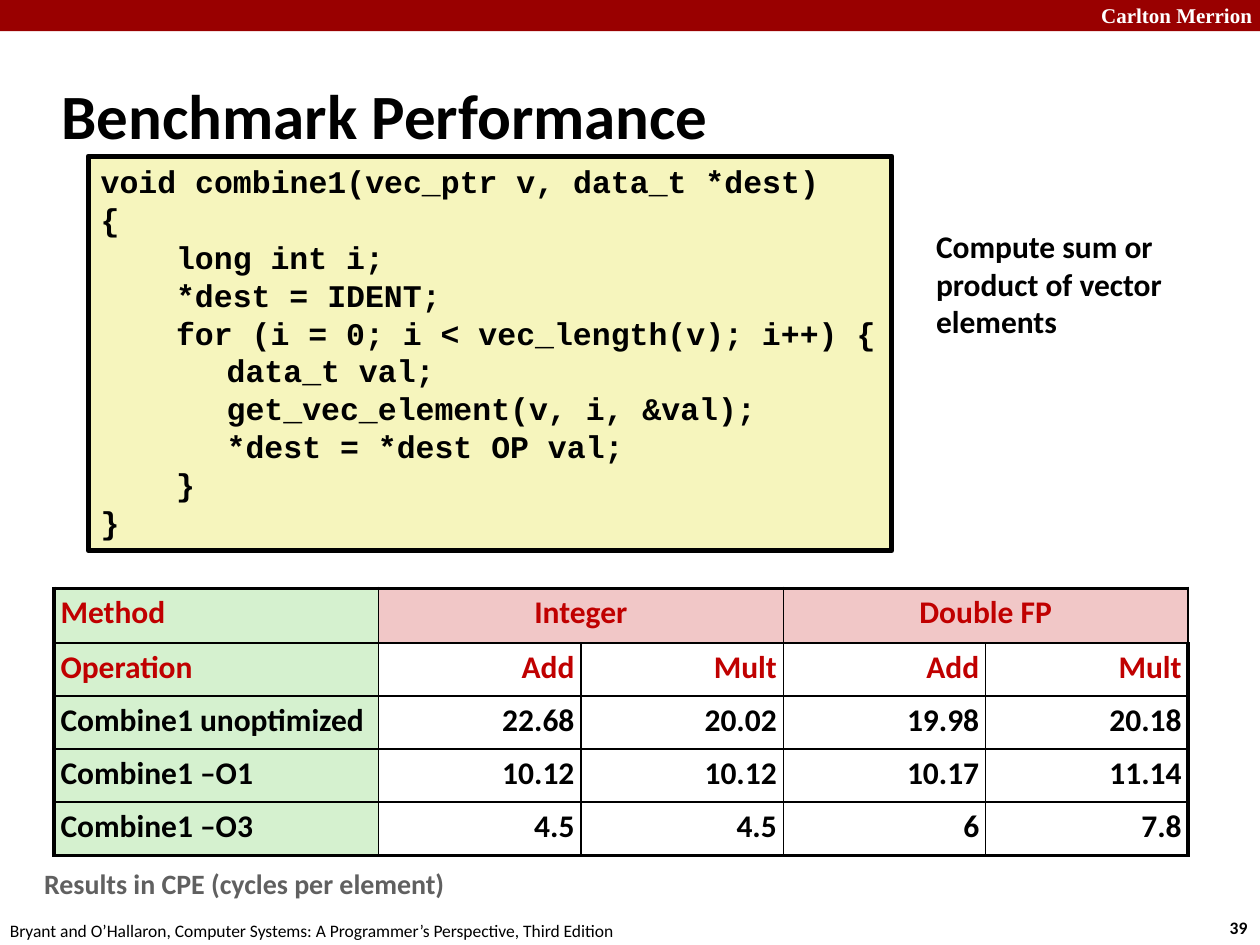
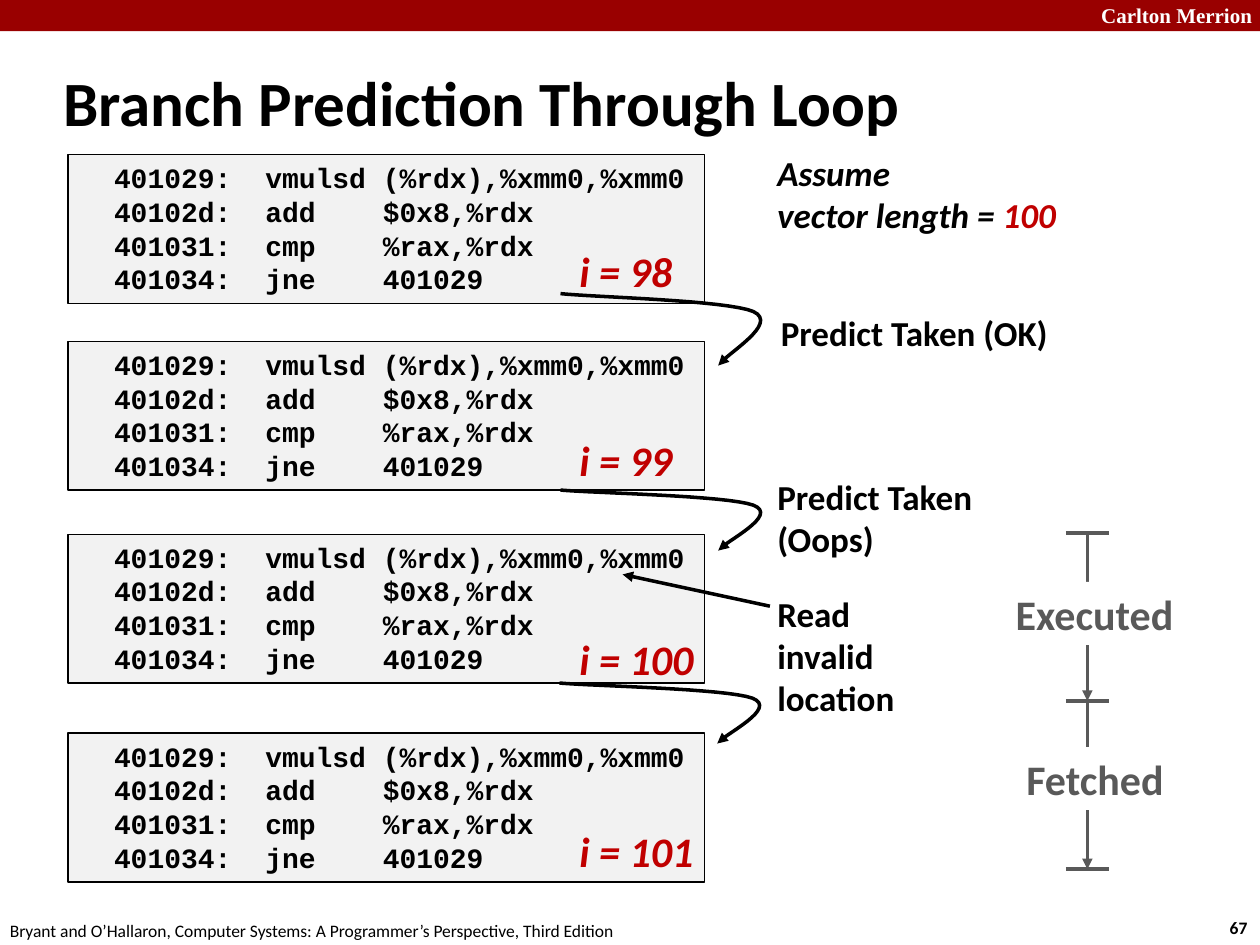
from dataclasses import dataclass, replace

import pptx
import pptx.dml.color
import pptx.enum.shapes
import pptx.enum.text
import pptx.oxml
import pptx.oxml.ns
import pptx.util
from lxml import etree

Cm = pptx.util.Cm
Pt = pptx.util.Pt
RGBColor = pptx.dml.color.RGBColor
Align = pptx.enum.text.PP_ALIGN
Anchor = pptx.enum.text.MSO_ANCHOR
qn = pptx.oxml.ns.qn

BLACK = RGBColor(0x00, 0x00, 0x00)
WHITE = RGBColor(0xFF, 0xFF, 0xFF)
BAND_RED = RGBColor(0x99, 0x00, 0x00)
RED = RGBColor(0xC0, 0x00, 0x00)
NOTE_GRAY = RGBColor(0x60, 0x60, 0x60)
SPAN_GRAY = RGBColor(0x59, 0x59, 0x59)
CODE_YELLOW = RGBColor(0xF6, 0xF5, 0xBD)
CODE_GRAY = RGBColor(0xF2, 0xF2, 0xF2)
HEAD_GREEN = RGBColor(0xD5, 0xF1, 0xCF)
HEAD_PINK = RGBColor(0xF1, 0xC7, 0xC7)


@dataclass(frozen=True)
class Style:
    size: float
    color: RGBColor = BLACK
    font: str = "Calibri"
    bold: bool = True
    italic: bool = False


TITLE = Style(36)
BRAND = Style(12, WHITE, "Times New Roman")
FOOTER = Style(10, bold=False)
PAGE_NUMBER = Style(10)
BODY = Style(18)
REMARK = Style(20)
ITERATION = Style(24, RED, italic=True)
SPAN_LABEL = Style(24, SPAN_GRAY)
C_CODE = Style(18, font="Courier New")
ASSEMBLY = Style(16, font="Courier New")

# Left indent in cm, then the line
COMBINE1 = [
    (0, "void combine1(vec_ptr v, data_t *dest)"),
    (0, "{"),
    (1.52, "long int i;"),
    (1.52, "*dest = IDENT;"),
    (1.52, "for (i = 0; i < vec_length(v); i++) {"),
    (2.54, "data_t val;"),
    (2.54, "get_vec_element(v, i, &val);"),
    (2.54, "*dest = *dest OP val;"),
    (1.52, "}"),
    (0, "}"),
]
LOOP = [
    "401029:\tvmulsd\t(%rdx),%xmm0,%xmm0",
    "40102d:\tadd\t$0x8,%rdx",
    "401031:\tcmp\t%rax,%rdx",
    "401034:\tjne\t401029",
]
LOOP_TABS = (3.05, 5.42)
CPE_ROWS = [
    ["Method", "Integer", "", "Double FP", ""],
    ["Operation", "Add", "Mult", "Add", "Mult"],
    ["Combine1 unoptimized", "22.68", "20.02", "19.98", "20.18"],
    ["Combine1 –O1", "10.12", "10.12", "10.17", "11.14"],
    ["Combine1 –O3", "4.5", "4.5", "6", "7.8"],
]
# Two Bezier segments of a jump: x in cm, y as a share of the drop
JUMP = [(0, 0), (0.66, 0.05), (3.35, 0.09), (3.89, 0.25),
        (4.42, 0.42), (3.33, 0.84), (3.18, 1)]


def add_run(paragraph, text, style):
    run = paragraph.add_run()
    run.text = text
    run.font.size = Pt(style.size)
    run.font.name = style.font
    run.font.bold = style.bold
    run.font.italic = style.italic
    run.font.color.rgb = style.color


def write_lines(frame, lines, style):
    for i, line in enumerate(lines):
        paragraph = frame.add_paragraph() if i else frame.paragraphs[0]
        paragraph.alignment = Align.LEFT
        add_run(paragraph, line, style)


def add_text(slide, left, top, width, height, lines, style, wrap=False):
    box = slide.shapes.add_textbox(Cm(left), Cm(top), Cm(width), Cm(height))
    box.text_frame.word_wrap = wrap
    write_lines(box.text_frame, lines, style)
    return box.text_frame


def add_box(slide, left, top, width, height, fill, line_width=0):
    box = slide.shapes.add_shape(
        pptx.enum.shapes.MSO_SHAPE.RECTANGLE,
        Cm(left), Cm(top), Cm(width), Cm(height))
    box.shadow.inherit = False
    box.fill.solid()
    box.fill.fore_color.rgb = fill
    if line_width:
        box.line.color.rgb = BLACK
        box.line.width = Pt(line_width)
    else:
        box.line.fill.background()
    box.text_frame.vertical_anchor = Anchor.TOP
    return box


def add_code(slide, left, top, width, height, lines, style, fill, line_width):
    box = add_box(slide, left, top, width, height, fill, line_width)
    frame = box.text_frame
    frame.word_wrap = True
    frame.margin_right = 0
    write_lines(frame, lines, style)
    return frame


def set_indent(paragraph, indent):
    properties = paragraph._p.get_or_add_pPr()
    properties.set("marL", str(Cm(indent)))
    properties.set("indent", "0")


def set_tabs(paragraph, stops):
    tabs = etree.SubElement(paragraph._p.get_or_add_pPr(), qn("a:tabLst"))
    for stop in stops:
        etree.SubElement(tabs, qn("a:tab"), pos=str(Cm(stop)), algn="l")


def style_line(shape, color, arrow):
    shape.line.color.rgb = color
    shape.line.width = Pt(2)
    if arrow:
        outline = shape.element.spPr.find(qn("a:ln"))
        etree.SubElement(outline, qn("a:tailEnd"), type="triangle")


def add_line(slide, x1, y1, x2, y2, color, arrow=False):
    line = slide.shapes.add_connector(
        pptx.enum.shapes.MSO_CONNECTOR.STRAIGHT,
        Cm(x1), Cm(y1), Cm(x2), Cm(y2))
    style_line(line, color, arrow)
    etree.SubElement(line.element.spPr, qn("a:effectLst"))


def bezier(points, t):
    weights = ((1 - t) ** 3, 3 * t * (1 - t) ** 2, 3 * t * t * (1 - t), t ** 3)
    return tuple(sum(w * p[axis] for w, p in zip(weights, points))
                 for axis in (0, 1))


def add_jump(slide, left, top, drop, steps=16):
    """Draw the curved arrow from one iteration to the next."""
    curve = [bezier(JUMP[start:start + 4], step / steps)
             for start in (0, 3) for step in range(1, steps + 1)]
    builder = slide.shapes.build_freeform(Cm(left), Cm(top), scale=1.0)
    builder.add_line_segments(
        [(Cm(left + x), Cm(top + y * drop)) for x, y in curve], close=False)
    jump = builder.convert_to_shape()
    jump.shadow.inherit = False
    jump.fill.background()
    style_line(jump, BLACK, True)


def set_border(cell, side, width):
    border = etree.SubElement(cell._tc.get_or_add_tcPr(), qn("a:ln" + side),
                              w=str(Pt(width)))
    fill = etree.SubElement(border, qn("a:solidFill"))
    etree.SubElement(fill, qn("a:srgbClr"), val=str(BLACK))


def format_cell(cell, row, column, last_row, last_column):
    outer = {"L": column == 0, "R": column == last_column,
             "T": row == 0, "B": row == last_row}
    for side, is_outer in outer.items():
        set_border(cell, side, 2.25 if is_outer else 1)
    if column and row:
        cell.fill.background()
    else:
        cell.fill.solid()
        cell.fill.fore_color.rgb = HEAD_PINK if column else HEAD_GREEN
    cell.margin_left = cell.margin_right = Cm(0.13)
    cell.margin_top = cell.margin_bottom = Cm(0.13)


def add_cpe_table(slide):
    last_row, last_column = len(CPE_ROWS) - 1, len(CPE_ROWS[0]) - 1
    table = slide.shapes.add_table(
        last_row + 1, last_column + 1,
        Cm(1.09), Cm(11.86), Cm(22.86), Cm(5.38)).table
    table.first_row = table.horz_banding = False
    for i, column in enumerate(table.columns):
        column.width = Cm(4.08 if i else 6.54)
    for i, row in enumerate(table.rows):
        row.height = Cm(1.07 if i else 1.1)
    for r, texts in enumerate(CPE_ROWS):
        for c, text in enumerate(texts):
            cell = table.cell(r, c)
            format_cell(cell, r, c, last_row, last_column)
            if not text:
                continue
            paragraph = cell.text_frame.paragraphs[0]
            paragraph.line_spacing = 0.95
            if c:
                paragraph.alignment = Align.RIGHT if r else Align.CENTER
            add_run(paragraph, text, replace(BODY, color=BLACK if r > 1 else RED))
    for c in (1, 3):
        table.cell(0, c).merge(table.cell(0, c + 1))


def add_slide(deck, title, number, left, top, width, height):
    """Add a slide with the band, footer, page number and title."""
    slide = deck.slides.add_slide(deck.slide_layouts[5])
    add_box(slide, 0, 0, 25.4, 0.63, BAND_RED)
    add_text(slide, 21.95, -0.08, 3.63, 0.76, ["Carlton Merrion"], BRAND)
    add_text(slide, 24.54, 18.36, 0.94, 0.69, [number], PAGE_NUMBER)
    add_text(slide, -0.05, 18.42, 12.9, 0.69,
             ["Bryant and O’Hallaron, Computer Systems: "
              "A Programmer’s Perspective, Third Edition"], FOOTER)
    heading = slide.shapes.title
    heading.left, heading.top = Cm(left), Cm(top)
    heading.width, heading.height = Cm(width), Cm(height)
    frame = heading.text_frame
    frame.auto_size = pptx.enum.text.MSO_AUTO_SIZE.NONE
    frame.vertical_anchor = Anchor.MIDDLE
    write_lines(frame, [title], TITLE)
    return slide


def build_benchmark(deck):
    slide = add_slide(deck, "Benchmark Performance", "39", 0.99, 1.24, 21.08, 2.11)
    code = add_code(slide, 1.78, 3.15, 16.2, 7.95,
                    [line for _, line in COMBINE1], C_CODE, CODE_YELLOW, 3)
    for paragraph, (indent, _) in zip(code.paragraphs, COMBINE1):
        set_indent(paragraph, indent)
    add_text(slide, 18.62, 4.45, 6.78, 2.57,
             ["Compute sum or product of vector elements"], BODY, wrap=True)
    add_cpe_table(slide)
    add_text(slide, 0.64, 17.35, 15.04, 0.94,
             ["Results in CPE (cycles per element)"],
             Style(16, NOTE_GRAY), wrap=True)


def add_span(slide, name, top, bottom, label_top, label_width):
    """Mark a range of time with an arrow and a label over it."""
    add_line(slide, 21.92, top, 21.92, bottom, SPAN_GRAY, arrow=True)
    label = add_box(slide, 22.09 - label_width / 2, label_top,
                    label_width, 1.27, WHITE)
    label.text_frame.word_wrap = False
    write_lines(label.text_frame, [name], SPAN_LABEL)


def build_branch_prediction(deck):
    slide = add_slide(deck, "Branch Prediction Through Loop", "67",
                      1.02, 1.24, 21.82, 1.6)
    for top in (3.12, 6.88, 10.77, 14.78):
        code = add_code(slide, 1.37, top, 12.83, 3, LOOP, ASSEMBLY, CODE_GRAY, 0.75)
        code.margin_left = Cm(0.93)
        for paragraph in code.paragraphs:
            set_tabs(paragraph, LOOP_TABS)
    for left, top, drop in ((11.3, 5.92, 1.45), (11.3, 9.88, 1.22),
                            (11.28, 13.77, 1.22)):
        add_jump(slide, left, top, drop)
    for i, top, width in ((98, 4.83, 2.39), (99, 8.64, 2.39),
                          (100, 12.65, 2.82), (101, 16.51, 2.82)):
        add_text(slide, 11.43, top, width, 1.27, [f"i = {i}"], ITERATION)

    assumption = add_text(slide, 15.42, 2.92, 6.17, 1.96,
                          ["Assume", "vector length = "],
                          replace(REMARK, italic=True))
    add_run(assumption.paragraphs[-1], "100",
            replace(REMARK, color=RED, italic=True))
    add_text(slide, 15.49, 6.15, 5.94, 1.12, ["Predict Taken (OK)"], REMARK)
    add_text(slide, 15.42, 9.47, 4.47, 1.96, ["Predict Taken", "(Oops)"], REMARK)
    add_text(slide, 15.42, 11.81, 3.61, 2.82,
             ["Read invalid location"], REMARK, wrap=True)
    add_line(slide, 15.52, 12.22, 12.55, 11.58, BLACK, arrow=True)

    ticks = (10.74, 14.13, 17.52)
    add_span(slide, "Executed", ticks[0], ticks[1], 11.73, 3.73)
    add_span(slide, "Fetched", ticks[1], ticks[2], 15.06, 3.3)
    for y in ticks:
        add_line(slide, 21.49, y, 22.35, y, SPAN_GRAY)


def main():
    deck = pptx.Presentation()
    deck.slide_width, deck.slide_height = Cm(25.4), Cm(19.05)
    build_benchmark(deck)
    build_branch_prediction(deck)
    deck.save("out.pptx")


if __name__ == "__main__":
    main()
